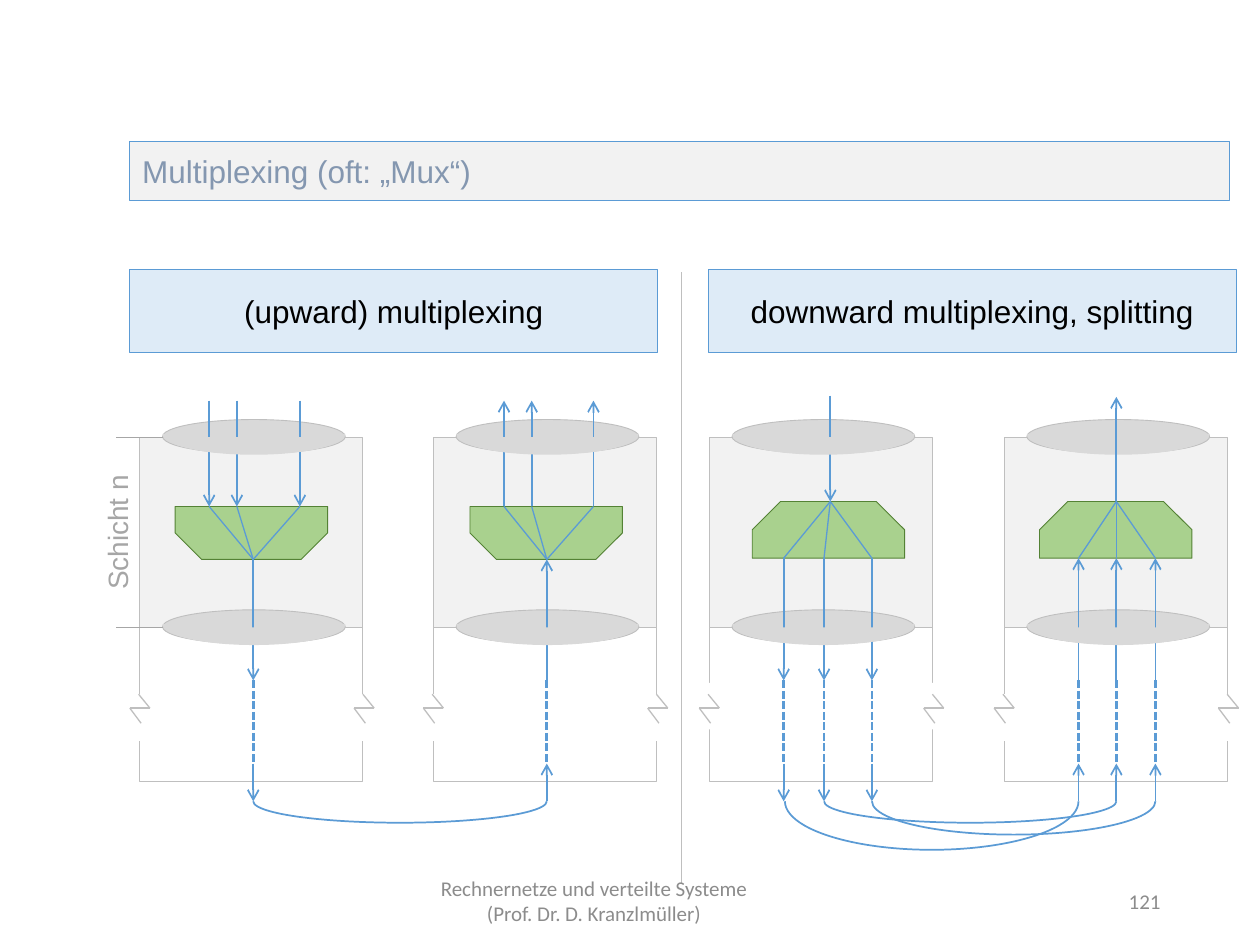
from dataclasses import dataclass

from lxml import etree
from pptx import Presentation
from pptx.dml.color import RGBColor
from pptx.enum.dml import MSO_LINE
from pptx.enum.shapes import MSO_CONNECTOR, MSO_SHAPE as Shape
from pptx.enum.text import MSO_ANCHOR as Anchor, PP_ALIGN as Align
from pptx.oxml.ns import qn
from pptx.util import Inches, Pt

BLUE, GREEN, DARK_GREEN = "5B9BD5", "A9D18E", "548235"
WHITE, PALE, DISC, EDGE, LABEL = "FFFFFF", "F2F2F2", "D9D9D9", "BFBFBF", "A6A6A6"
LAYER_TOP, LAYER_BOTTOM, FLOOR = 3.47, 4.98, 6.2
ARROW_END, DASH_END, ARC_MIDDLE = 5.4, 6.06, 6.36


@dataclass
class Column:
    left: float
    hub: float
    ports: list[float]
    splitting: bool
    rising: bool
    mux_offset: float
    outer_y: float
    cover_top: float
    lower_front: tuple[float, float]  # offset and width
    entry_on_top: bool = False


COLUMNS = [
    Column(1.11, 2.01, [1.66, 1.88, 2.38], False, False, 0.28, 3.18, 5.51, (0.59, 0.72)),
    Column(3.44, 4.34, [4.0, 4.22, 4.71], False, True, 0.29, 3.18, 5.51, (0.59, 0.72)),
    Column(5.63, 6.59, [6.22, 6.54, 6.92], True, False, 0.34, 3.14, 5.42, (0.41, 0.9)),
    Column(7.97, 8.86, [8.56, 8.86, 9.17], True, True, 0.28, 3.15, 5.51, (0.56, 0.75), True),
]
# left end, right end, depth
LINKS = [(2.01, 4.34, 0.34), (6.54, 8.86, 0.34), (6.92, 9.17, 0.53), (6.23, 8.56, 0.77)]

presentation = Presentation()
presentation.slide_width, presentation.slide_height = Inches(10), Inches(7.5)
slide = presentation.slides.add_slide(presentation.slide_layouts[6])


def rgb(code: str) -> RGBColor:
    return RGBColor.from_string(code)


def add_shape(kind, left: float, top: float, width: float, height: float,
              fill: str | None = None, line: str | None = None,
              weight: float = 0.5, flip: bool = False):
    shape = slide.shapes.add_shape(kind, Inches(left), Inches(top), Inches(width), Inches(height))
    shape.shadow.inherit = False
    if fill:
        shape.fill.solid()
        shape.fill.fore_color.rgb = rgb(fill)
    else:
        shape.fill.background()
    if line:
        shape.line.color.rgb = rgb(line)
        shape.line.width = Pt(weight)
    else:
        shape.line.fill.background()
    if flip:
        shape._element.spPr.find(qn("a:xfrm")).set("flipV", "1")
    return shape


def add_line(x1: float, y1: float, x2: float, y2: float, color: str = BLUE,
             weight: float = 0.75, arrow: bool = False, dashed: bool = False) -> None:
    connector = slide.shapes.add_connector(
        MSO_CONNECTOR.STRAIGHT, Inches(x1), Inches(y1), Inches(x2), Inches(y2))
    connector.line.color.rgb = rgb(color)
    connector.line.width = Pt(weight)
    if dashed:
        connector.line.dash_style = MSO_LINE.SQUARE_DOT
    if arrow:
        etree.SubElement(connector.line._get_or_add_ln(), qn("a:tailEnd"), type="arrow")
    etree.SubElement(connector._element.spPr, qn("a:effectLst"))


def add_flow(x: float, top: float, bottom: float, rising: bool) -> None:
    """Vertical arrow pointing up when rising, otherwise down."""
    start, end = (bottom, top) if rising else (top, bottom)
    add_line(x, start, x, end, weight=1, arrow=True)


def write(shape, lines: list[str], size: float, font: str, color: str,
          align=Align.CENTER, anchor=Anchor.MIDDLE):
    frame = shape.text_frame
    frame.word_wrap = True
    frame.vertical_anchor = anchor
    for index, line in enumerate(lines):
        paragraph = frame.paragraphs[0] if index == 0 else frame.add_paragraph()
        paragraph.alignment = align
        run = paragraph.add_run()
        run.text = line
        run.font.size, run.font.name = Pt(size), font
        run.font.color.rgb = rgb(color)
    return frame


def add_text(left: float, top: float, width: float, height: float, lines: list[str],
             size: float, font: str, color: str, **options):
    box = slide.shapes.add_textbox(Inches(left), Inches(top), Inches(width), Inches(height))
    write(box, lines, size, font, color, **options)
    return box


def add_disc_front(column: Column, middle: float, offset: float, width: float) -> None:
    """Front half of an access disc, hiding the lines that pass behind it."""
    add_shape(Shape.BLOCK_ARC, column.left + 0.18, middle - 0.19, 1.45, 0.33, DISC, flip=True)
    add_shape(Shape.RECTANGLE, column.left + offset, middle, width, 0.08, DISC)


def add_break(edge: float) -> None:
    """Zigzag that marks a shortened side wall."""
    for x1, y1, x2, y2 in [(0.08, 5.62, -0.01, 5.51), (0.01, 5.74, -0.08, 5.62),
                           (0.08, 5.62, -0.08, 5.62)]:
        add_line(edge + x1, y1, edge + x2, y2, EDGE)


def add_column(column: Column) -> None:
    left, rising = column.left, column.rising
    add_shape(Shape.RECTANGLE, left, LAYER_BOTTOM, 1.77, FLOOR - LAYER_BOTTOM, WHITE, EDGE)
    add_shape(Shape.RECTANGLE, left, LAYER_TOP, 1.77, LAYER_BOTTOM - LAYER_TOP, PALE, EDGE)
    for middle in (LAYER_TOP, LAYER_BOTTOM):
        add_shape(Shape.OVAL, left + 0.18, middle - 0.14, 1.45, 0.27, DISC, EDGE)
    add_shape(Shape.RECTANGLE, left - 0.12, column.cover_top, 1.95, 0.37, WHITE)
    for edge in (left, left + 1.78):
        add_break(edge)

    mux_top, mux_bottom = (3.98, 4.43) if column.splitting else (4.02, 4.44)
    mux = add_shape(Shape.SNIP_2_SAME_RECTANGLE, left + column.mux_offset, mux_top, 1.21,
                    mux_bottom - mux_top, GREEN, DARK_GREEN, flip=not column.splitting)
    mux.adjustments[0] = 0.5
    hub_y, port_y = (mux_top, mux_bottom) if column.splitting else (mux_bottom, mux_top)
    for port in column.ports:
        add_line(column.hub, hub_y, port, port_y)

    upper, lower = [column.hub], column.ports
    if not column.splitting:
        upper, lower = lower, upper
    for x in lower:
        add_flow(x, mux_bottom, ARROW_END, rising)
        add_line(x, ARROW_END, x, DASH_END, weight=1.5, dashed=True)
        add_flow(x, DASH_END, ARC_MIDDLE, rising)
    add_disc_front(column, LAYER_BOTTOM, *column.lower_front)
    if column.entry_on_top:
        add_disc_front(column, LAYER_TOP, 0.41, 0.9)
    for x in upper:
        add_flow(x, column.outer_y, mux_top, rising)
    if not column.entry_on_top:
        add_disc_front(column, LAYER_TOP, 0.41, 0.9)


def add_link(left: float, right: float, depth: float) -> None:
    arc = add_shape(Shape.ARC, left, ARC_MIDDLE - depth / 2, right - left, depth,
                    line=BLUE, weight=1, flip=True)
    arc.adjustments[0], arc.adjustments[1] = 108, 0  # half a turn


def main() -> None:
    title = add_shape(Shape.RECTANGLE, 1.03, 1.12, 8.73, 0.47, PALE, BLUE)
    write(title, ["Multiplexing (oft: „Mux“)"], 18, "Arial", "8497B0", align=Align.LEFT)
    for left, heading in [(1.03, "(upward) multiplexing"),
                          (5.62, "downward multiplexing, splitting")]:
        panel = add_shape(Shape.RECTANGLE, left, 2.14, 4.19, 0.66, "DEEBF7", BLUE)
        write(panel, [heading], 18, "Arial", "000000")
    add_line(5.41, 2.16, 5.41, 7.01, EDGE)

    for column in COLUMNS:
        add_column(column)
    for link in LINKS:
        add_link(*link)

    for y in (LAYER_TOP, LAYER_BOTTOM):
        add_line(1.29, y, 0.92, y, LABEL, 0.5)
    layer = add_text(0.17, 4.04, 1.52, 0.37, ["Schicht n"], 16, "Arial", LABEL, anchor=Anchor.TOP)
    layer.rotation = 270

    footer = add_text(3.31, 6.95, 3.38, 0.4,
                      ["Rechnernetze und verteilte Systeme", "(Prof. Dr. D. Kranzlmüller)"],
                      12, "Calibri", "8C8C8C")
    first_line = footer.text_frame.paragraphs[0]._p.get_or_add_pPr()
    first_line.set("marR", str(Inches(0.57)))
    add_text(7.06, 6.95, 2.25, 0.4, ["121"], 12, "Calibri", "8C8C8C", align=Align.RIGHT)
    presentation.save("out.pptx")


if __name__ == "__main__":
    main()
